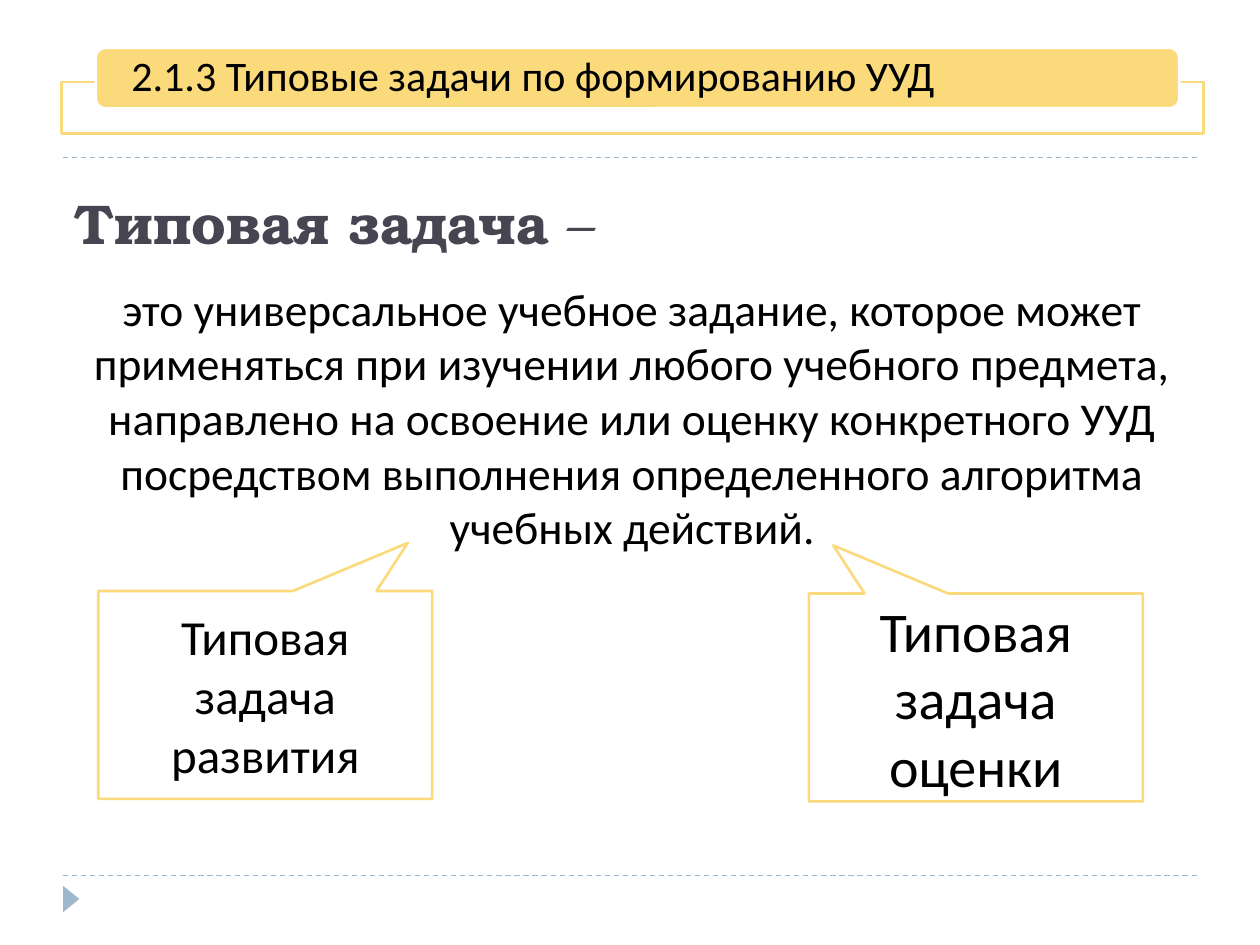
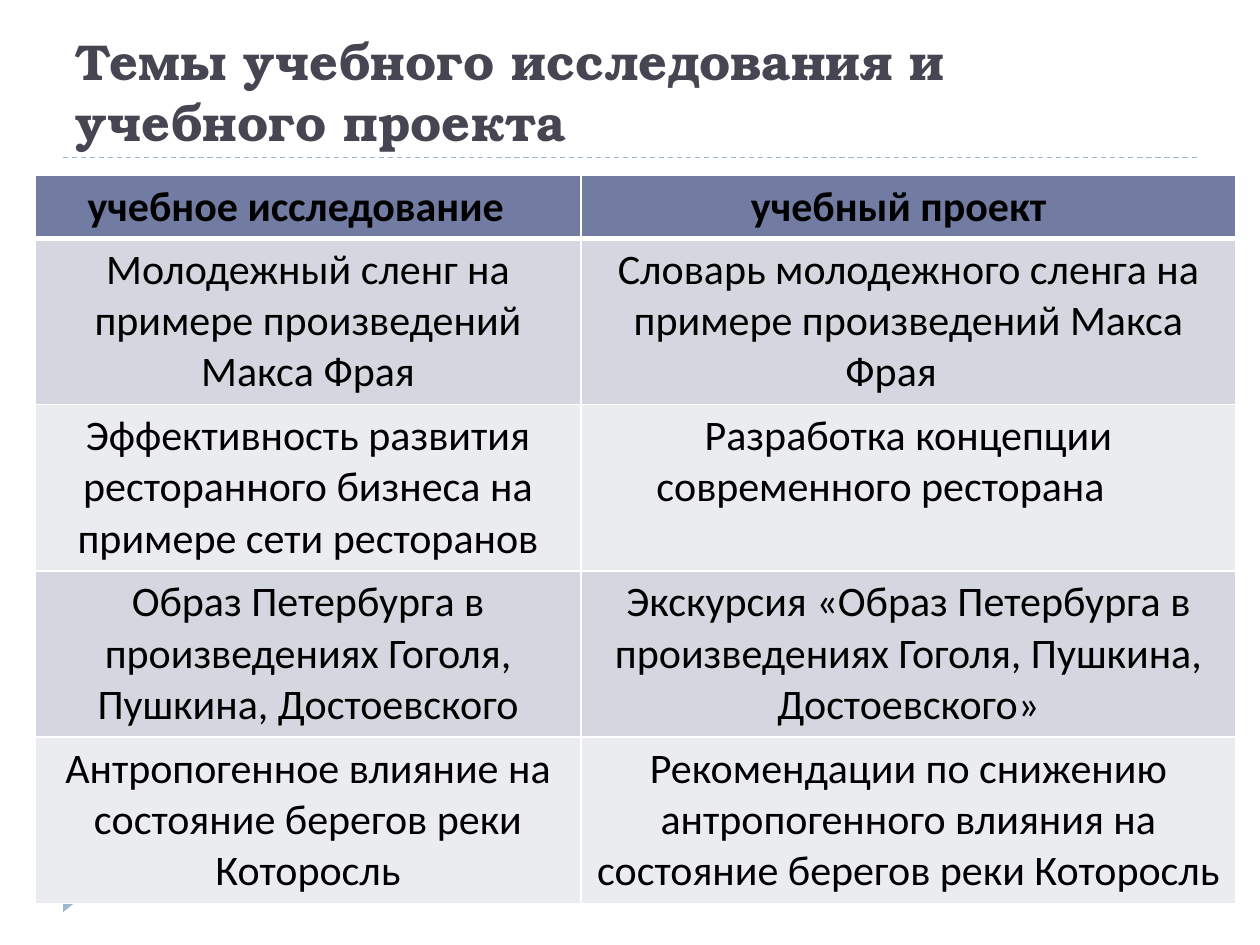
from pptx import Presentation
from pptx.dml.color import RGBColor
from pptx.enum import dml, shapes, text
from pptx.oxml import parse_xml
from pptx.oxml.ns import nsdecls, qn
from pptx.util import Inches, Pt

WHITE = RGBColor(0xFF, 0xFF, 0xFF)
BLACK = RGBColor(0, 0, 0)
SLATE = RGBColor(0x46, 0x46, 0x53)
STEEL = RGBColor(0x9F, 0xB8, 0xCD)
GOLD = RGBColor(0xFA, 0xDA, 0x7A)
HEAD = RGBColor(0x72, 0x7C, 0xA3)
BANDS = (RGBColor(0xD5, 0xD7, 0xE0), RGBColor(0xEB, 0xEC, 0xF0))
SANS, SERIF = "Calibri", "TeX Gyre Bonum"
LEFT, MID = text.PP_ALIGN.LEFT, text.PP_ALIGN.CENTER
KIND = shapes.MSO_SHAPE

TOPICS = (
    ("учебное исследование \t", "учебный проект\t"),
    ("Молодежный сленг на примере произведений Макса Фрая",
     "Словарь молодежного сленга на примере произведений Макса Фрая\t"),
    ("Эффективность развития ресторанного бизнеса на примере сети ресторанов",
     "Разработка концепции современного ресторана \t"),
    ("Образ Петербурга в произведениях Гоголя, Пушкина, Достоевского",
     "Экскурсия «Образ Петербурга в произведениях Гоголя, Пушкина, Достоевского»"),
    ("Антропогенное влияние на состояние берегов реки Которосль",
     "Рекомендации по снижению антропогенного влияния на состояние берегов реки Которосль"),
)


def style(para, size, align=MID, face=SANS, color=BLACK, bold=False):
    para.alignment = align
    font = para.font
    font.name, font.size, font.bold = face, Pt(size), bold
    font.color.rgb = color


def write(frame, words, size, anchor=text.MSO_ANCHOR.MIDDLE, **look):
    frame.word_wrap = True
    frame.vertical_anchor = anchor
    para = frame.paragraphs[0]
    para.add_run().text = words
    style(para, size, **look)
    return para


def add_text(slide, box, words, size, **look):
    frame = slide.shapes.add_textbox(*map(Inches, box)).text_frame
    return write(frame, words, size, **look)


def add_title(slide, box, words, size):
    return add_text(slide, box, words, size, anchor=text.MSO_ANCHOR.BOTTOM,
                    align=LEFT, face=SERIF, color=SLATE, bold=True)


def add_shape(slide, kind, box, fill, line=None):
    shape = slide.shapes.add_shape(kind, *map(Inches, box))
    shape.shadow.inherit = False
    shape.fill.solid()
    shape.fill.fore_color.rgb = fill
    if line is None:
        shape.line.fill.background()
    else:
        shape.line.color.rgb = line
        shape.line.width = Pt(1.5)
    return shape


def add_rule(slide, top):
    rule = slide.shapes.add_connector(
        shapes.MSO_CONNECTOR.STRAIGHT, Inches(0.5), Inches(top), Inches(9.5), Inches(top))
    rule.line.color.rgb = STEEL
    rule.line.width = Pt(0.75)
    rule.line.dash_style = dml.MSO_LINE.DASH
    props = rule._element.find(qn("p:spPr"))
    props.append(parse_xml(f"<a:effectLst {nsdecls('a')}/>"))


def add_slide(deck):
    slide = deck.slides.add_slide(deck.slide_layouts[6])
    for top in (6.95, 1.25):
        add_rule(slide, top)
    mark = add_shape(slide, KIND.ISOSCELES_TRIANGLE, (0.46, 7.07, 0.21, 0.13), STEEL)
    mark.rotation = 90
    return slide


def add_banner(slide, words):
    add_shape(slide, KIND.RECTANGLE, (0.49, 0.65, 9.06, 0.41), WHITE, GOLD)
    tab = add_shape(slide, KIND.ROUNDED_RECTANGLE, (0.76, 0.38, 8.6, 0.48), GOLD, WHITE)
    frame = tab.text_frame
    frame.margin_left = frame.margin_right = Inches(0.26)
    frame.margin_top = frame.margin_bottom = 0
    write(frame, words, 24, align=LEFT).line_spacing = 0.9


def add_callout(slide, left, top, tip, words, size):
    shape = add_shape(slide, KIND.RECTANGULAR_CALLOUT, (left, top, 2.65, 1.65), WHITE, GOLD)
    shape.adjustments[0], shape.adjustments[1] = tip, -0.731
    write(shape.text_frame, words, size)


def set_edges(cell, low):
    props = cell._tc.get_or_add_tcPr()
    for spot, (edge, width) in enumerate((("L", 1), ("R", 1), ("T", 1), ("B", low))):
        props.insert(spot, parse_xml(
            f'<a:ln{edge} {nsdecls("a")} w="{Pt(width)}"><a:solidFill>'
            f'<a:srgbClr val="{WHITE}"/></a:solidFill></a:ln{edge}>'))


def add_table(slide, rows, box, widths, heights):
    table = slide.shapes.add_table(len(rows), len(widths), *map(Inches, box)).table
    for col, width in zip(table.columns, widths):
        col.width = Inches(width)
    for r, words in enumerate(rows):
        table.rows[r].height = Inches(heights[r])
        for c, word in enumerate(words):
            cell = table.cell(r, c)
            cell.fill.solid()
            cell.fill.fore_color.rgb = BANDS[(r - 1) % 2] if r else HEAD
            set_edges(cell, 1 if r else 3)
            para = cell.text_frame.paragraphs[0]
            para.add_run().text = word
            style(para, 24, bold=r == 0)


def add_task(deck):
    slide = add_slide(deck)
    title = add_title(slide, (0.49, 1.39, 9, 0.69), "Типовая задача", 32)
    dash = title.add_run()
    dash.text = " –"
    dash.font.bold = False
    add_text(slide, (0.52, 2.18, 9, 2.28),
             "это универсальное учебное задание, которое может применяться при изучении "
             "любого учебного предмета, направлено на освоение или оценку конкретного УУД "
             "посредством выполнения определенного алгоритма учебных действий.",
             26, anchor=text.MSO_ANCHOR.TOP)
    add_banner(slide, "2.1.3 Типовые задачи по формированию УУД")
    add_callout(slide, 0.78, 4.69, 0.427, "Типовая задача развития", 28)
    add_callout(slide, 6.42, 4.71, -0.427, "Типовая задача оценки", 32)


def add_topics(deck):
    slide = add_slide(deck)
    add_title(slide, (0.5, 0.17, 9, 1.08),
              "Темы учебного исследования и учебного проекта", 28.8)
    add_table(slide, TOPICS, (0.28, 1.39, 9.53, 5.78), (4.33, 5.2), [0.5] + [1.32] * 4)


def main():
    deck = Presentation()
    deck.slide_width, deck.slide_height = Inches(10), Inches(7.5)
    add_task(deck)
    add_topics(deck)
    deck.save("out.pptx")


if __name__ == "__main__":
    main()
